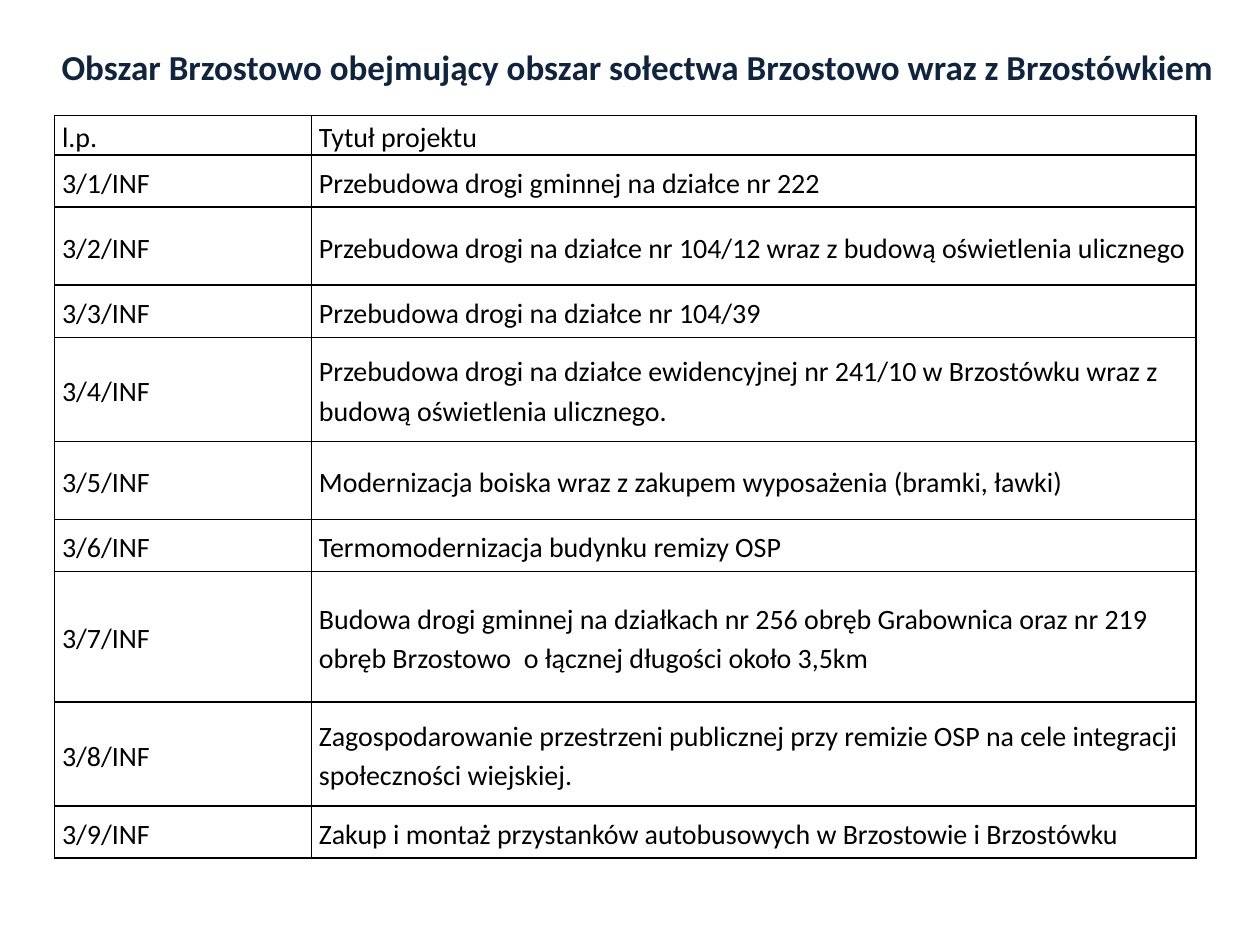
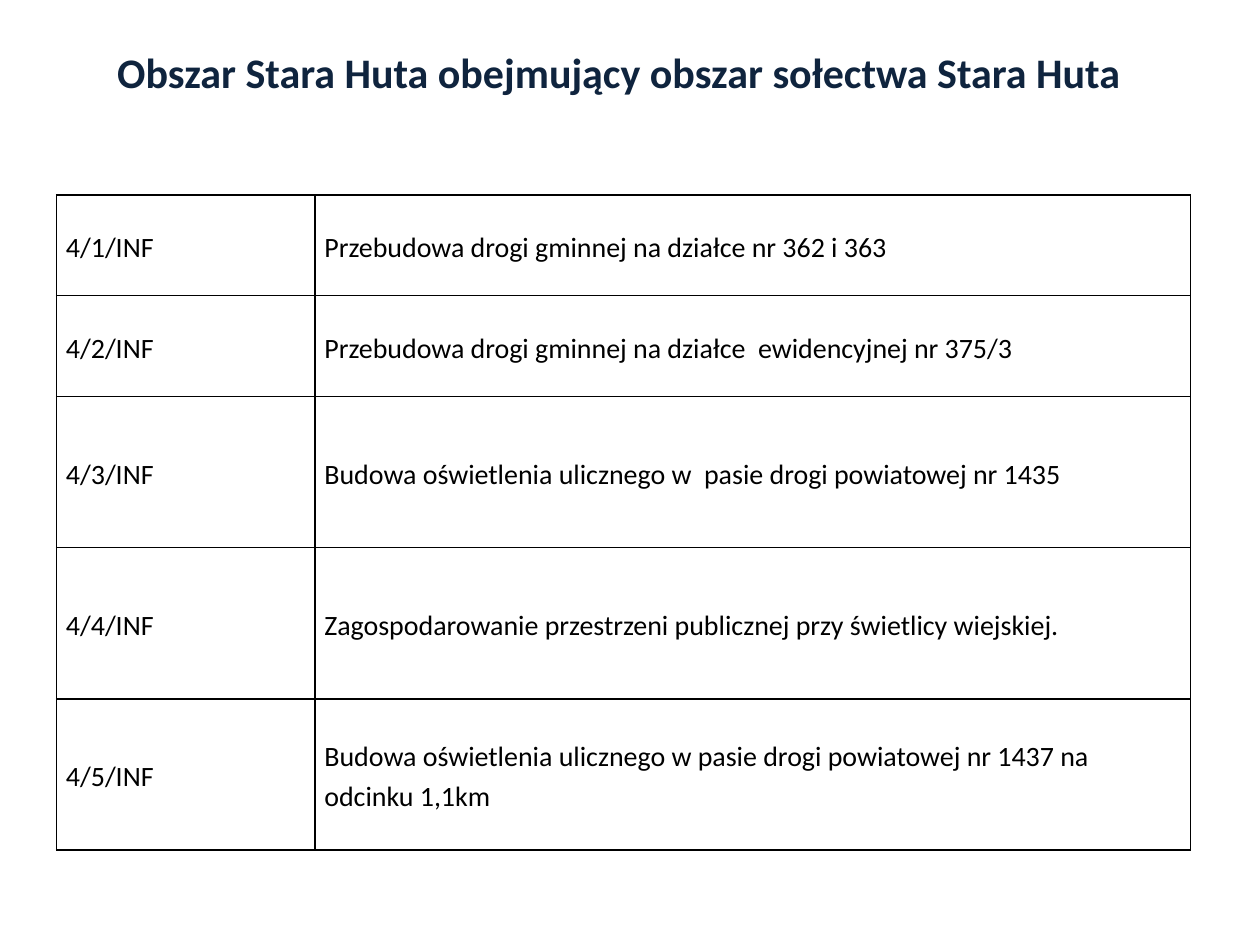
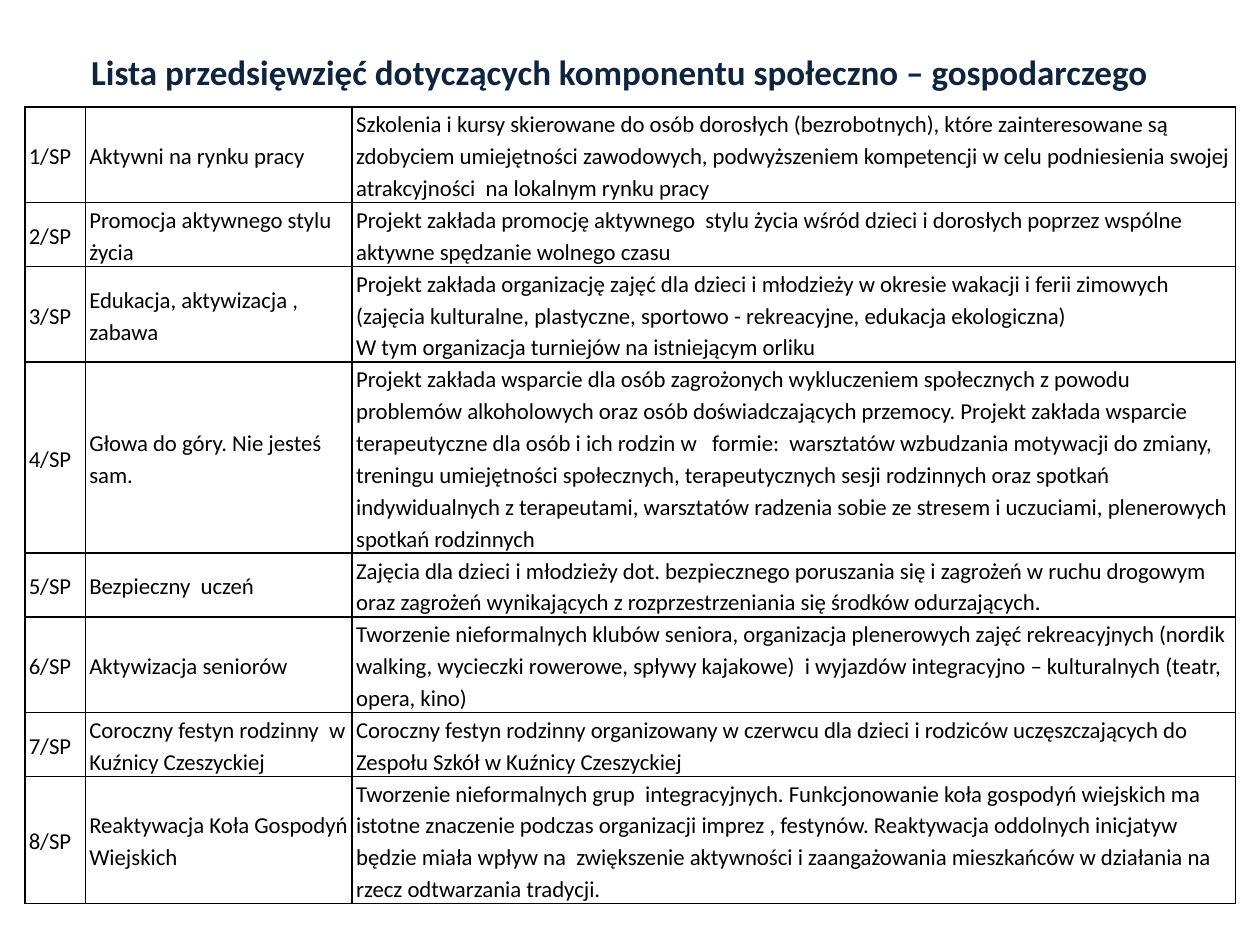
from dataclasses import dataclass

from lxml.etree import SubElement
from pptx import Presentation
from pptx.dml.color import RGBColor
from pptx.enum.text import MSO_ANCHOR, PP_ALIGN
from pptx.oxml.ns import qn
from pptx.util import Cm, Pt


@dataclass(frozen=True)
class Theme:
    """Colours, font and type sizes shared by all slides."""
    font: str = "Calibri"
    title: str = "0F243E"
    text: str = "000000"
    border: str = "000000"
    border_pt: float = 1
    title_pt: int = 20
    big_title_pt: int = 24
    body_pt: int = 16
    dense_pt: int = 13
    line_spacing: float = 1.15


THEME = Theme()
TITLE_BOX = (1.14, 0.76, 22.86, 1.37)
WIDE_TITLE_BOX = (0.3, 0.33, 25.1, 2.01)

BRZOSTOWO = [
    "Przebudowa drogi gminnej na działce nr 222",
    "Przebudowa drogi na działce nr 104/12 wraz z budową oświetlenia ulicznego",
    "Przebudowa drogi na działce nr 104/39",
    "Przebudowa drogi na działce ewidencyjnej nr 241/10 w Brzostówku wraz z "
    "budową oświetlenia ulicznego.",
    "Modernizacja boiska wraz z zakupem wyposażenia (bramki, ławki)",
    "Termomodernizacja budynku remizy OSP",
    "Budowa drogi gminnej na działkach nr 256 obręb Grabownica oraz nr 219 "
    "obręb Brzostowo  o łącznej długości około 3,5km",
    "Zagospodarowanie przestrzeni publicznej przy remizie OSP na cele integracji "
    "społeczności wiejskiej.",
    "Zakup i montaż przystanków autobusowych w Brzostowie i Brzostówku",
]

STARA_HUTA = [
    "Przebudowa drogi gminnej na działce nr 362 i 363",
    "Przebudowa drogi gminnej na działce  ewidencyjnej nr 375/3",
    "Budowa oświetlenia ulicznego w  pasie drogi powiatowej nr 1435",
    "Zagospodarowanie przestrzeni publicznej przy świetlicy wiejskiej.",
    "Budowa oświetlenia ulicznego w pasie drogi powiatowej nr 1437 na odcinku 1,1km",
]

SOCIAL = [
    ("Aktywni na rynku pracy",
     "Szkolenia i kursy skierowane do osób dorosłych (bezrobotnych), które "
     "zainteresowane są zdobyciem umiejętności zawodowych, podwyższeniem kompetencji "
     "w celu podniesienia swojej atrakcyjności  na lokalnym rynku pracy"),
    ("Promocja aktywnego stylu życia",
     "Projekt zakłada promocję aktywnego  stylu życia wśród dzieci i dorosłych "
     "poprzez wspólne aktywne spędzanie wolnego czasu"),
    ("Edukacja, aktywizacja , zabawa",
     "Projekt zakłada organizację zajęć dla dzieci i młodzieży w okresie wakacji i "
     "ferii zimowych (zajęcia kulturalne, plastyczne, sportowo - rekreacyjne, "
     "edukacja ekologiczna)\nW tym organizacja turniejów na istniejącym orliku"),
    ("Głowa do góry. Nie jesteś sam.",
     "Projekt zakłada wsparcie dla osób zagrożonych wykluczeniem społecznych z powodu "
     "problemów alkoholowych oraz osób doświadczających przemocy. Projekt zakłada "
     "wsparcie terapeutyczne dla osób i ich rodzin w   formie:  warsztatów wzbudzania "
     "motywacji do zmiany, treningu umiejętności społecznych, terapeutycznych sesji "
     "rodzinnych oraz spotkań indywidualnych z terapeutami, warsztatów radzenia sobie "
     "ze stresem i uczuciami, plenerowych spotkań rodzinnych"),
    ("Bezpieczny  uczeń",
     "Zajęcia dla dzieci i młodzieży dot. bezpiecznego poruszania się i zagrożeń w "
     "ruchu drogowym  oraz zagrożeń wynikających z rozprzestrzeniania się środków "
     "odurzających."),
    ("Aktywizacja seniorów",
     "Tworzenie nieformalnych klubów seniora, organizacja plenerowych zajęć "
     "rekreacyjnych (nordik walking, wycieczki rowerowe, spływy kajakowe)  i wyjazdów "
     "integracyjno – kulturalnych (teatr, opera, kino)"),
    ("Coroczny festyn rodzinny  w Kuźnicy Czeszyckiej",
     "Coroczny festyn rodzinny organizowany w czerwcu dla dzieci i rodziców "
     "uczęszczających do Zespołu Szkół w Kuźnicy Czeszyckiej"),
    ("Reaktywacja Koła Gospodyń Wiejskich",
     "Tworzenie nieformalnych grup  integracyjnych. Funkcjonowanie koła gospodyń "
     "wiejskich ma istotne znaczenie podczas organizacji imprez , festynów. "
     "Reaktywacja oddolnych inicjatyw będzie miała wpływ na  zwiększenie aktywności i "
     "zaangażowania mieszkańców w działania na rzecz odtwarzania tradycji."),
]


def style_font(p, size, color, bold=False):
    """Set the font of a whole paragraph."""
    p.font.name = THEME.font
    p.font.size = Pt(size)
    p.font.bold = bold
    p.font.color.rgb = RGBColor.from_string(color)


def add_titled_slide(prs, text, box=TITLE_BOX, size=THEME.title_pt):
    """Add a title-only slide with its title placed and formatted."""
    s = prs.slides.add_slide(prs.slide_layouts[5])
    title = s.shapes.title
    title.left, title.top, title.width, title.height = map(Cm, box)
    tf = title.text_frame
    tf.text = text
    tf.vertical_anchor = MSO_ANCHOR.MIDDLE
    p = tf.paragraphs[0]
    p.alignment = PP_ALIGN.CENTER
    style_font(p, size, THEME.title, bold=True)
    return s


def add_borders(cell):
    """Draw a thin line on all four sides of a cell."""
    tc_pr = cell._tc.get_or_add_tcPr()
    for side in ("lnL", "lnR", "lnT", "lnB"):
        ln = SubElement(tc_pr, qn(f"a:{side}"), w=str(Pt(THEME.border_pt)))
        fill = SubElement(ln, qn("a:solidFill"))
        SubElement(fill, qn("a:srgbClr"), val=THEME.border)


def fill_cell(cell, text, size, inset):
    """Write and format one table cell."""
    cell.text = text
    cell.vertical_anchor = MSO_ANCHOR.MIDDLE
    cell.margin_left = cell.margin_right = Cm(inset)
    cell.margin_top = cell.margin_bottom = 0
    add_borders(cell)
    cell.fill.background()
    for p in cell.text_frame.paragraphs:
        p.line_spacing = THEME.line_spacing
        style_font(p, size, THEME.text)


def add_grid(s, rows, left, top, widths, heights, inset, size=THEME.body_pt):
    """Add a plain bordered table."""
    frame = s.shapes.add_table(len(rows), len(widths), Cm(left), Cm(top),
                               Cm(sum(widths)), Cm(sum(heights)))
    table = frame.table
    table.first_row = table.horz_banding = False
    for column, width in zip(table.columns, widths):
        column.width = Cm(width)
    for row, height, texts in zip(table.rows, heights, rows):
        row.height = Cm(height)
        for cell, text in zip(row.cells, texts):
            fill_cell(cell, text, size, inset)


def number_projects(area, titles):
    """Pair each project title with its infrastructure number."""
    return [(f"{area}/{i}/INF", title) for i, title in enumerate(titles, 1)]


def main():
    """Build the presentation."""
    prs = Presentation()
    prs.slide_width, prs.slide_height = Cm(25.4), Cm(19.05)

    s = add_titled_slide(
        prs, "Obszar Brzostowo obejmujący obszar sołectwa Brzostowo wraz z Brzostówkiem",
        WIDE_TITLE_BOX)
    add_grid(s, [("l.p.", "Tytuł projektu")] + number_projects(3, BRZOSTOWO),
             1.1, 2.33, (5.18, 17.83),
             [0.79] + [1.05 * n / 2 for n in (2, 3, 2, 4, 3, 2, 5, 4, 2)], 0.15)

    s = add_titled_slide(prs, "Obszar Stara Huta obejmujący obszar sołectwa Stara Huta ",
                         size=THEME.big_title_pt)
    add_grid(s, number_projects(4, STARA_HUTA), 1.14, 3.93, (5.21, 17.65),
             [2.03] * 2 + [3.05] * 3, 0.19)

    s = add_titled_slide(
        prs, "Lista przedsięwzięć dotyczących komponentu społeczno – gospodarczego ")
    add_grid(s, [(f"{i}/SP", *texts) for i, texts in enumerate(SOCIAL, 1)],
             0.5, 2.16, (1.22, 5.38, 17.81),
             [0.64 * n for n in (3, 2, 3, 6, 2, 3, 2, 4)], 0.08, THEME.dense_pt)

    prs.save("out.pptx")


if __name__ == "__main__":
    main()
